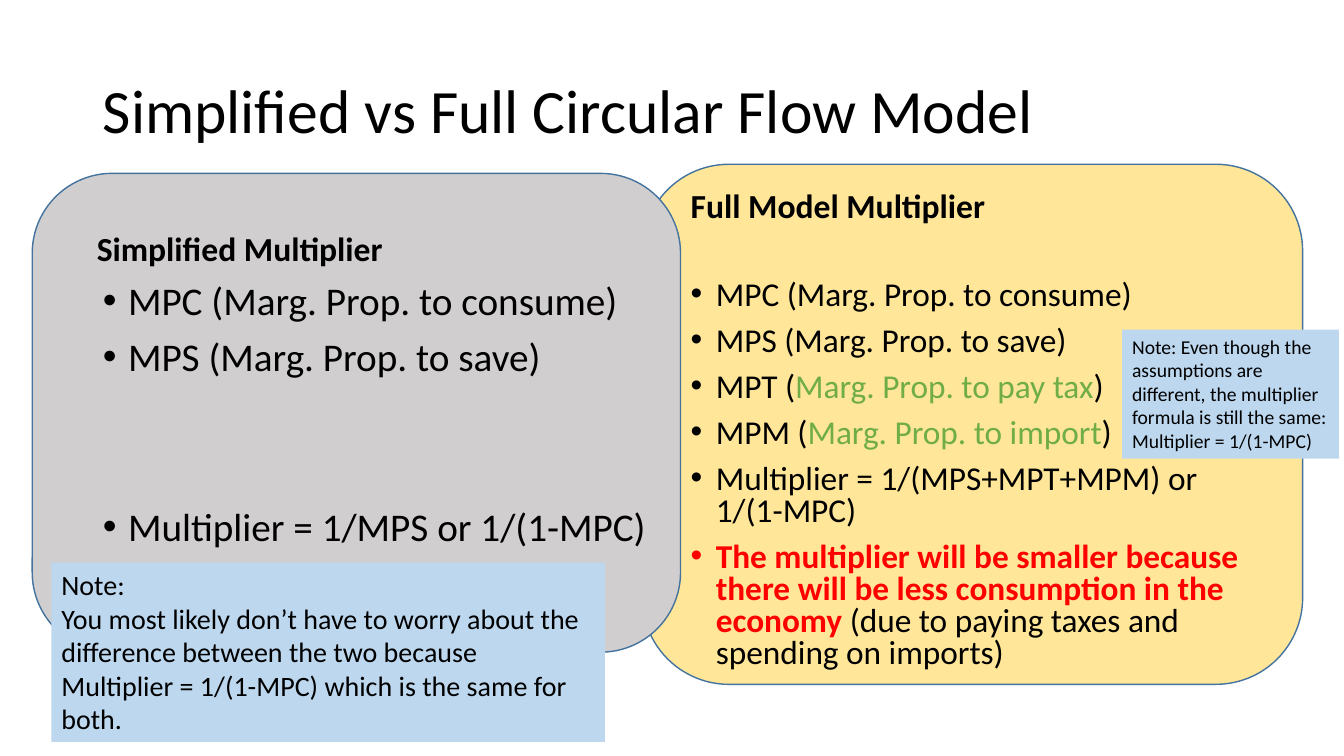
import pptx
import pptx.dml.color
import pptx.enum.shapes
import pptx.enum.text
import pptx.util
from lxml import etree

Inches = pptx.util.Inches
Pt = pptx.util.Pt
Anchor = pptx.enum.text.MSO_ANCHOR
Shape = pptx.enum.shapes.MSO_SHAPE

COLOURS = {
    "text": "000000", "outline": "43739E", "full": "FFE699",
    "simplified": "D0CECE", "note": "BDD7EE", "extra": "70AD47",
    "warning": "FF0000",
}


class SlideBuilder:
    """Builds the elements of one slide in a shared style."""

    font_name = "Calibri"

    def __init__(self, presentation):
        self.slide = presentation.slides.add_slide(presentation.slide_layouts[4])

    def colour(self, name):
        return pptx.dml.color.RGBColor.from_string(COLOURS[name])

    def fill_text(self, shape, paragraphs, size, anchor=Anchor.TOP, bold=False,
                  line_spacing=1.0, gaps=None, bulleted=False):
        frame = shape.text_frame
        frame.word_wrap = True
        frame.auto_size = pptx.enum.text.MSO_AUTO_SIZE.NONE
        frame.vertical_anchor = anchor
        for index, runs in enumerate(paragraphs):
            paragraph = frame.add_paragraph() if index else frame.paragraphs[0]
            paragraph.alignment = pptx.enum.text.PP_ALIGN.LEFT
            paragraph.line_spacing = line_spacing
            paragraph.space_before = Pt(gaps[index] if gaps else 0)
            self.set_bullet(paragraph, bulleted)
            paragraph.font.name = self.font_name
            paragraph.font.size = Pt(size)
            paragraph.font.bold = bold
            paragraph.font.color.rgb = self.colour("text")
            for text, *emphasis in [(runs,)] if isinstance(runs, str) else runs:
                run = paragraph.add_run()
                run.text = text
                if emphasis:
                    run.font.color.rgb = self.colour(emphasis[0])
                    run.font.bold = emphasis[0] == "warning"

    def set_bullet(self, paragraph, bulleted):
        properties = paragraph._p.get_or_add_pPr()
        indent = Inches(0.25) if bulleted else 0
        properties.set("marL", str(indent))
        properties.set("indent", str(-indent))
        namespace = properties.nsmap["a"]
        if bulleted:
            etree.SubElement(properties, f"{{{namespace}}}buFont", typeface="Arial")
            etree.SubElement(properties, f"{{{namespace}}}buChar", char="•")
        else:
            etree.SubElement(properties, f"{{{namespace}}}buNone")

    def placeholder(self, index, box, paragraphs, size, **style):
        shape = self.slide.placeholders[index]
        shape.left, shape.top, shape.width, shape.height = map(Inches, box)
        self.fill_text(shape, paragraphs, size, **style)

    def block(self, kind, box, fill):
        shape = self.slide.shapes.add_shape(kind, *map(Inches, box))
        shape.shadow.inherit = False
        shape.fill.solid()
        shape.fill.fore_color.rgb = self.colour(fill)
        return shape

    def panel(self, box, fill, depth):
        shape = self.block(Shape.ROUNDED_RECTANGLE, box, fill)
        shape.line.color.rgb = self.colour("outline")
        shape.line.width = Pt(1)
        self.slide.shapes._spTree.insert(2 + depth, shape._element)

    def note(self, box, paragraphs, size):
        shape = self.block(Shape.RECTANGLE, box, "note")
        shape.line.fill.background()
        self.fill_text(shape, paragraphs, size)


def main():
    presentation = pptx.Presentation()
    presentation.slide_width = Inches(13.33)
    presentation.slide_height = Inches(7.5)
    builder = SlideBuilder(presentation)

    builder.panel((6.37, 1.63, 6.55, 5.16), "full", 0)
    builder.panel((0.32, 1.72, 6.43, 4.75), "simplified", 1)

    builder.placeholder(0, (0.92, 0.4, 11.5, 1.45),
                        ["Simplified vs Full Circular Flow Model"], 44,
                        anchor=Anchor.MIDDLE, line_spacing=0.9)
    headings = [
        (1, (0.86, 2.01, 5.64, 0.71), "Simplified Multiplier"),
        (3, (6.75, 1.39, 5.67, 0.9), "Full Model Multiplier"),
    ]
    for index, box, heading in headings:
        builder.placeholder(index, box, [heading], 24, anchor=Anchor.BOTTOM,
                            bold=True, line_spacing=0.9)

    consume = "MPC (Marg. Prop. to consume)"
    save = "MPS (Marg. Prop. to save)"
    builder.placeholder(2, (0.92, 2.74, 5.64, 4.03),
                        [consume, save, "Multiplier = 1/MPS or 1/(1-MPC)"], 28,
                        line_spacing=0.9, gaps=[0, 10, 91], bulleted=True)
    builder.placeholder(4, (6.75, 2.74, 5.67, 4.03), [
        consume,
        save,
        [("MPT (",), ("Marg. Prop. to pay tax", "extra"), (")",)],
        [("MPM (",), ("Marg. Prop. to import", "extra"), (")",)],
        "Multiplier = 1/(MPS+MPT+MPM) or 1/(1-MPC)",
        [("The multiplier will be smaller because there will be less "
          "consumption in the economy ", "warning"),
         ("(due to paying taxes and spending on imports)",)],
    ], 23.8, line_spacing=0.8, gaps=[0] + [10] * 5, bulleted=True)

    builder.note((0.51, 5.58, 5.49, 1.78), [
        "Note:",
        "You most likely don’t have to worry about the difference between the "
        "two because Multiplier = 1/(1-MPC) which is the same for both.",
    ], 20)
    builder.note((11.13, 3.27, 2.15, 1.28), [
        "Note: Even though the assumptions are different, the multiplier "
        "formula is still the same:",
        "Multiplier = 1/(1-MPC)",
    ], 14)
    presentation.save("out.pptx")


if __name__ == "__main__":
    main()
